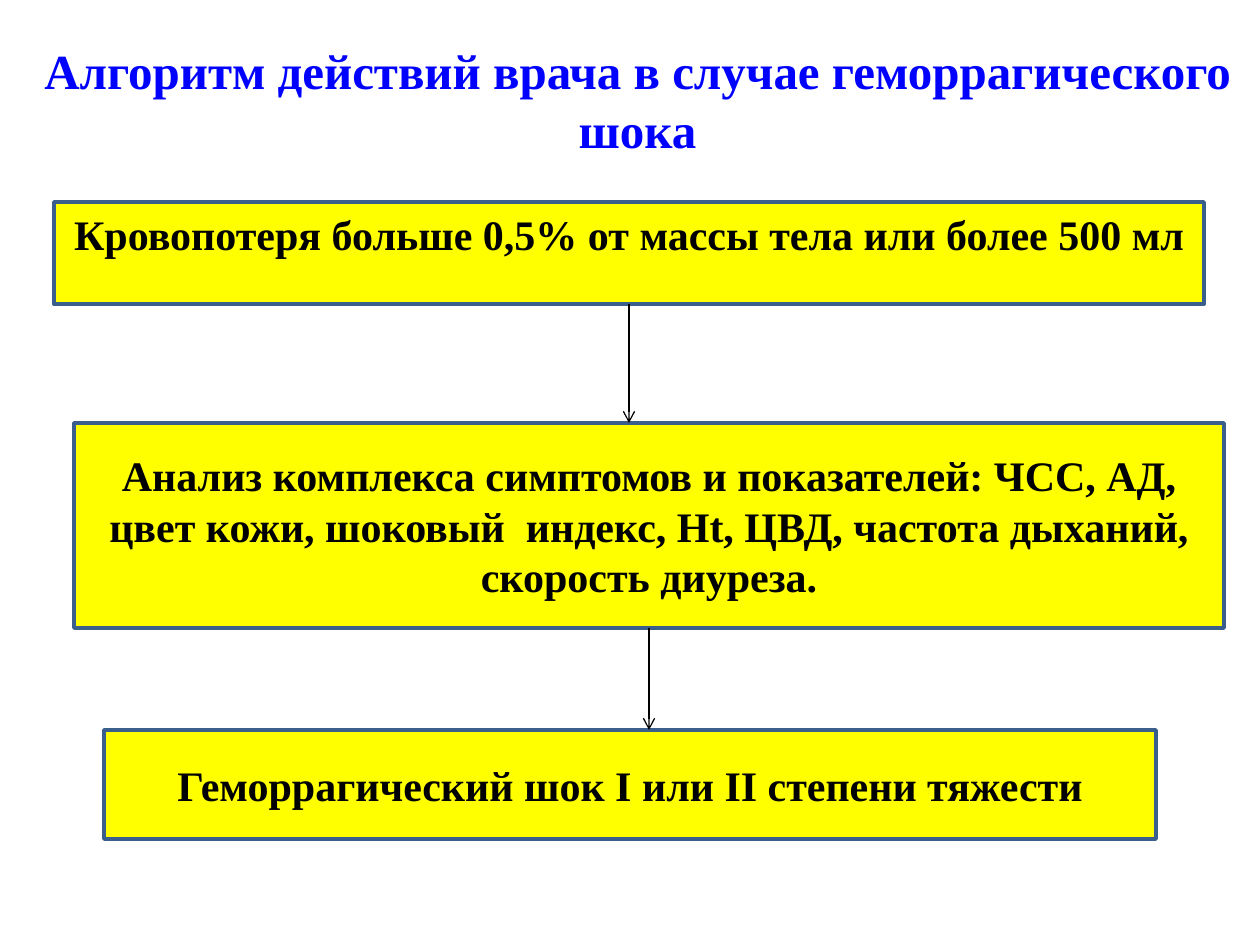
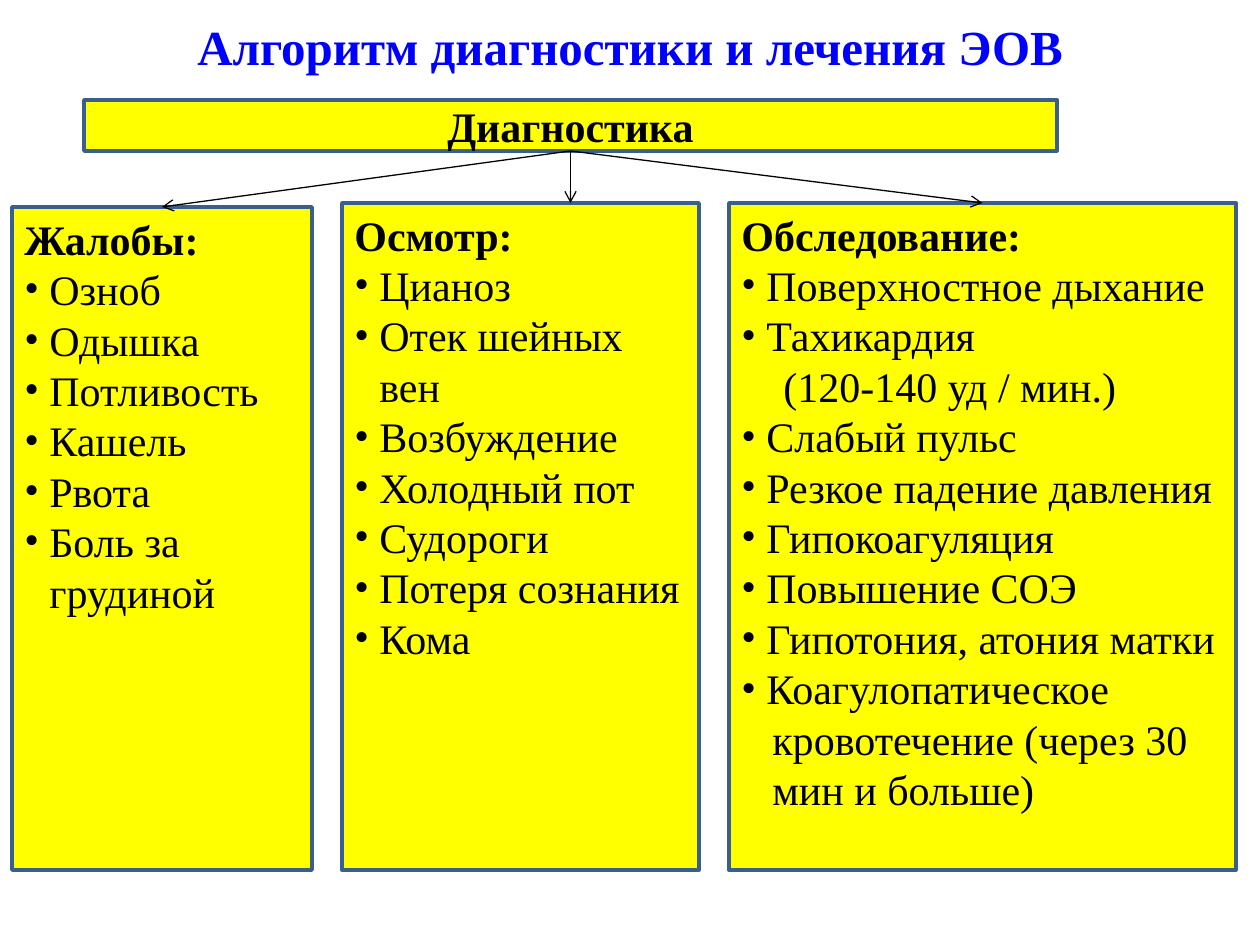
"""Build two slides with clinical algorithms as flowcharts."""
import pptx
import pptx.dml.color
import pptx.enum.shapes
import pptx.enum.text
import pptx.oxml.ns
import pptx.oxml.xmlchemy
import pptx.util

RGBColor = pptx.dml.color.RGBColor
PP_ALIGN = pptx.enum.text.PP_ALIGN
MSO_ANCHOR = pptx.enum.text.MSO_ANCHOR

STEPS_TITLE = "Алгоритм действий врача в случае геморрагического шока"
STEPS_TITLE_BOX = (15, 34, 1245, 131)
STEPS = [
    ("Кровопотеря больше 0,5% от массы тела или более 500 мл",
     (54, 202, 1150, 102), MSO_ANCHOR.TOP),
    ("Анализ комплекса симптомов и показателей: ЧСС, АД, цвет кожи, "
     "шоковый  индекс, Ht, ЦВД, частота дыханий, скорость диуреза.",
     (74, 423, 1150, 205), MSO_ANCHOR.MIDDLE),
    ("Геморрагический шок І или ІІ степени тяжести",
     (104, 730, 1052, 109), MSO_ANCHOR.MIDDLE),
]

DIAGNOSIS_TITLE = "Алгоритм диагностики и лечения ЭОВ"
DIAGNOSIS_TITLE_BOX = (0, 10, 1260, 72)
DIAGNOSIS = "Диагностика"
DIAGNOSIS_BOX = (84, 100, 973, 51)
COLUMNS = [
    ("Жалобы:", (12, 207, 300),
     ["Озноб", "Одышка", "Потливость", "Кашель", "Рвота", "Боль за грудиной"]),
    ("Осмотр:", (342, 203, 357),
     ["Цианоз", "Отек шейных вен", "Возбуждение", "Холодный пот", "Судороги",
      "Потеря сознания", "Кома"]),
    ("Обследование:", (729, 203, 507),
     ["Поверхностное дыхание", "Тахикардия", ("(120-140 уд / мин.)", 42),
      "Слабый пульс", "Резкое падение давления", "Гипокоагуляция",
      "Повышение СОЭ", "Гипотония, атония матки", "Коагулопатическое",
      ("кровотечение (через 30", 31), ("мин и больше)", 31)]),
]
COLUMN_BOTTOM = 870
BULLET_INDENT = 25

FONT = "Times New Roman"
TITLE_SIZE, TEXT_SIZE = 28, 24
BLUE = RGBColor(0x00, 0x00, 0xFF)
YELLOW = RGBColor(0xFF, 0xFF, 0x00)
STEEL = RGBColor(0x3A, 0x5F, 0x8C)
BLACK = RGBColor(0x00, 0x00, 0x00)
PX_PER_INCH = 126


def px(n):
    return pptx.util.Emu(round(n * 914400 / PX_PER_INCH))


def add_xml(parent, tag, **attrs):
    el = pptx.oxml.xmlchemy.OxmlElement(tag)
    for name, value in attrs.items():
        el.set(name, str(value))
    parent.append(el)


def write(p, text, size=TEXT_SIZE, color=BLACK, bold=True, align=PP_ALIGN.CENTER):
    p.text = text
    p.alignment = align
    for r in p.runs:
        r.font.name = FONT
        r.font.size = pptx.util.Pt(size)
        r.font.bold = bold
        r.font.color.rgb = color


def add_slide(prs, title, box):
    s = prs.slides.add_slide(prs.slide_layouts[5])
    sp = s.shapes.title
    sp.left, sp.top, sp.width, sp.height = map(px, box)
    tf = sp.text_frame
    tf.auto_size = pptx.enum.text.MSO_AUTO_SIZE.NONE
    tf.vertical_anchor = MSO_ANCHOR.TOP
    write(tf.paragraphs[0], title, TITLE_SIZE, BLUE)
    return s


def add_box(s, box, text, anchor=MSO_ANCHOR.MIDDLE, align=PP_ALIGN.CENTER):
    sp = s.shapes.add_shape(
        pptx.enum.shapes.MSO_SHAPE.FLOWCHART_PROCESS, *map(px, box))
    sp.shadow.inherit = False
    sp.fill.solid()
    sp.fill.fore_color.rgb = YELLOW
    sp.line.color.rgb = STEEL
    sp.line.width = pptx.util.Pt(2)
    tf = sp.text_frame
    tf.word_wrap = True
    tf.vertical_anchor = anchor
    write(tf.paragraphs[0], text, align=align)
    return sp


def add_items(sp, items):
    for item in items:
        p = sp.text_frame.add_paragraph()
        bulleted = isinstance(item, str)
        text, indent = (item, BULLET_INDENT) if bulleted else item
        write(p, text, bold=False, align=PP_ALIGN.LEFT)
        pPr = p._p.get_or_add_pPr()
        pPr.set("marL", str(px(indent)))
        if bulleted:
            pPr.set("indent", str(-px(indent)))
            add_xml(pPr, "a:buFont", typeface=FONT)
            add_xml(pPr, "a:buChar", char="•")


def add_arrow(s, source, target):
    x = source.left + source.width // 2
    below = target.left <= x <= target.left + target.width
    end_x = x if below else target.left + target.width // 2
    cxn = s.shapes.add_connector(
        pptx.enum.shapes.MSO_CONNECTOR.STRAIGHT,
        x, source.top + source.height, end_x, target.top)
    cxn.line.color.rgb = BLACK
    cxn.line.width = pptx.util.Pt(0.75)
    spPr = cxn._element.spPr
    add_xml(spPr.find(pptx.oxml.ns.qn("a:ln")), "a:tailEnd", type="arrow")
    add_xml(spPr, "a:effectLst")


def build_steps(prs):
    s = add_slide(prs, STEPS_TITLE, STEPS_TITLE_BOX)
    boxes = [add_box(s, box, text, anchor) for text, box, anchor in STEPS]
    for source, target in zip(boxes, boxes[1:]):
        add_arrow(s, source, target)


def build_diagnosis(prs):
    s = add_slide(prs, DIAGNOSIS_TITLE, DIAGNOSIS_TITLE_BOX)
    header = add_box(s, DIAGNOSIS_BOX, DIAGNOSIS)
    for heading, (left, top, width), items in COLUMNS:
        sp = add_box(s, (left, top, width, COLUMN_BOTTOM - top), heading,
                     MSO_ANCHOR.TOP, PP_ALIGN.LEFT)
        add_items(sp, items)
        add_arrow(s, header, sp)


def main():
    prs = pptx.Presentation()
    prs.slide_width = pptx.util.Inches(10)
    prs.slide_height = pptx.util.Inches(7.5)
    build_steps(prs)
    build_diagnosis(prs)
    prs.save("out.pptx")


if __name__ == "__main__":
    main()
